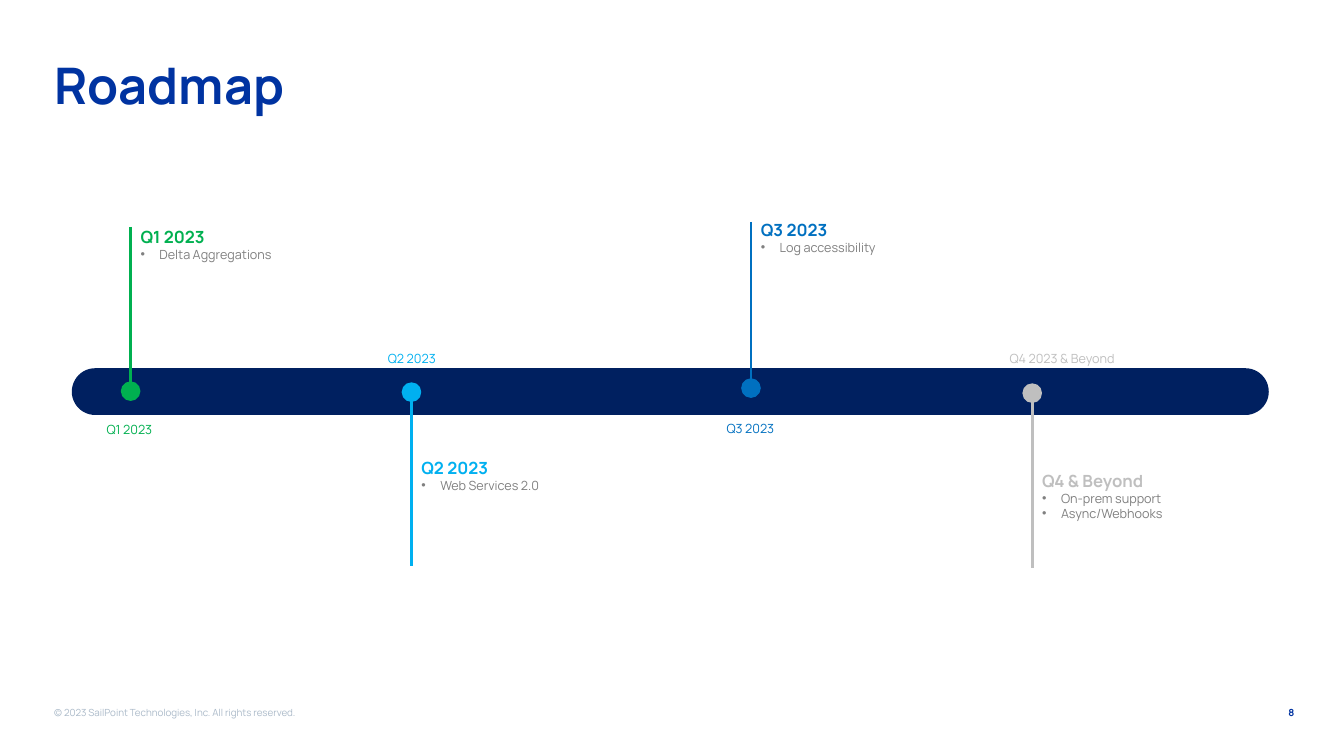
from lxml import etree
from pptx import Presentation
from pptx.dml.color import RGBColor
from pptx.enum.shapes import MSO_CONNECTOR, MSO_SHAPE
from pptx.enum.text import MSO_ANCHOR, PP_ALIGN
from pptx.oxml.ns import qn
from pptx.util import Pt

LINE = MSO_CONNECTOR.STRAIGHT
CIRCLE = MSO_SHAPE.OVAL
ROUNDED = MSO_SHAPE.ROUNDED_RECTANGLE
TOP, MIDDLE = MSO_ANCHOR.TOP, MSO_ANCHOR.MIDDLE
LEFT, RIGHT = PP_ALIGN.LEFT, PP_ALIGN.RIGHT

BLUE = RGBColor(0x00, 0x33, 0xA1)
NAVY = RGBColor(0x00, 0x20, 0x60)
FOOTER = RGBColor(0xAB, 0xBA, 0xC9)
GRAY = RGBColor(0x80, 0x80, 0x80)
GREEN = RGBColor(0x00, 0xB0, 0x50)
SKY = RGBColor(0x00, 0xB0, 0xF0)
AZURE = RGBColor(0x00, 0x70, 0xC0)
SILVER = RGBColor(0xBF, 0xBF, 0xBF)

DOT = 13
INDENT = 13.5

deck = Presentation()
deck.slide_width, deck.slide_height = Pt(960), Pt(540)
page = deck.slides.add_slide(deck.slide_layouts[6])


def add_text(place, lines, size, color, bold=False, anchor=TOP, align=LEFT):
    box = page.shapes.add_textbox(*[Pt(length) for length in place])
    frame = box.text_frame
    frame.word_wrap = True
    frame.vertical_anchor = anchor
    frame.text = "\n".join(lines)
    for index, para in enumerate(frame.paragraphs):
        para.alignment = align
        is_item = index > 0
        if is_item:
            properties = para._p.get_or_add_pPr()
            properties.set("marL", str(Pt(INDENT)))
            properties.set("indent", str(-Pt(INDENT)))
            etree.SubElement(properties, qn("a:buFont"), typeface="Arial")
            etree.SubElement(properties, qn("a:buChar"), char="•")
        for span in para.runs:
            span.font.name = "Manrope"
            span.font.size = Pt(9 if is_item else size)
            span.font.bold = bold and not is_item
            span.font.color.rgb = GRAY if is_item else color


def add_filled(kind, place, color):
    shape = page.shapes.add_shape(kind, *[Pt(length) for length in place])
    shape.shadow.inherit = False
    shape.fill.solid()
    shape.fill.fore_color.rgb = color
    shape.line.color.rgb = color
    shape.line.width = Pt(1)
    return shape


add_text((869, 499.7, 62.6, 18), ["8"], 7, BLUE, True, MIDDLE, RIGHT)
add_text((31.7, 499.7, 305.3, 18),
         ["© 2023 SailPoint Technologies, Inc. All rights reserved."], 7, FOOTER, anchor=MIDDLE)
add_text((31.7, 28.8, 837.4, 62.6), ["Roadmap"], 36, BLUE, True, MIDDLE)

bar = add_filled(ROUNDED, (51.8, 263.5, 854, 32.4), NAVY)
bar.adjustments[0] = 0.5

milestones = [
    (GREEN, 93.3, 279.4, (162, 278.6), (158.4, 116.6, 32.4),
     ["Q1 2023", "Delta Aggregations"], "Q1 2023", (69.1, 298.1, 48.2)),
    (SKY, 293.9, 280.1, (284.4, 404.6), (323.3, 104.4, 32.4),
     ["Q2 2023", "Web Services 2.0"], "Q2 2023", (270, 247, 50.4)),
    (AZURE, 536.4, 277.2, (158.4, 275), (153.4, 103, 43.9),
     ["Q3 2023", "Log accessibility"], "Q3 2023", (511.9, 297.4, 51.1)),
    (SILVER, 737.3, 280.8, (285.1, 405.4), (332.6, 108.7, 65.5),
     ["Q4 & Beyond", "On-prem support", "Async/Webhooks"], "Q4 2023 & Beyond", (714.2, 247, 96.5)),
]

for color, x, dot_y, (start, end), detail, lines, label, label_place in milestones:
    add_filled(CIRCLE, (x - DOT / 2, dot_y - DOT / 2, DOT, DOT), color)
    stem = page.shapes.add_connector(LINE, Pt(x), Pt(start), Pt(x), Pt(end))
    stem.line.color.rgb = color
    stem.line.width = Pt(2)
    etree.SubElement(stem._element.spPr, qn("a:effectLst"))
    add_text((x, *detail), lines, 12, color, True)
    add_text((*label_place, 18), [label], 9, color)

deck.save("out.pptx")
